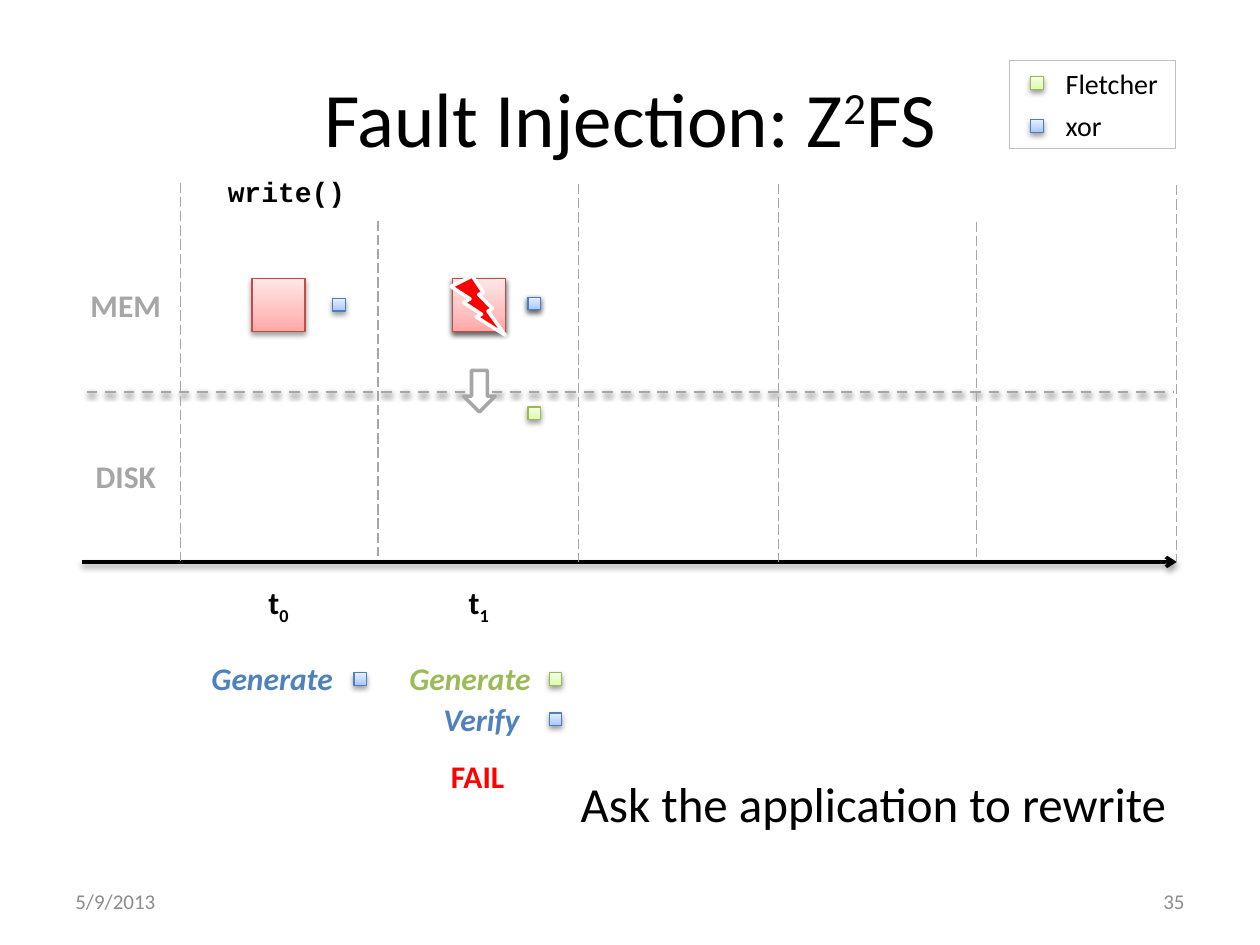
import copy
from dataclasses import dataclass

import pptx
import pptx.dml.color
import pptx.enum.dml
import pptx.enum.shapes
import pptx.enum.text
import pptx.oxml
import pptx.oxml.ns
import pptx.util
from pptx.util import Inches

SHAPE = pptx.enum.shapes.MSO_SHAPE
DASH = pptx.enum.dml.MSO_LINE
ALIGN = pptx.enum.text.PP_ALIGN
ANCHOR = pptx.enum.text.MSO_ANCHOR
qn = pptx.oxml.ns.qn


@dataclass(frozen=True)
class Theme:
    font: str = "Calibri"
    code_font: str = "Courier New"
    black: str = "000000"
    white: str = "FFFFFF"
    gray: str = "A6A6A6"
    border: str = "BFBFBF"
    footer: str = "8C8C8C"
    red: str = "FF0000"
    blue: str = "4F81BD"
    green: str = "9BBB59"
    # Each tint holds the outline, then the gradient from bottom to top.
    xor: tuple = ("4B7EBC", "A4C4FF", "BFD4FF", "E6EEFF")
    fletcher: tuple = ("98B955", "DAFDA7", "E4FCC2", "F5FFE7")
    data: tuple = ("BF4C48", "FFA6A5", "FFC0BF", "FFE7E7")
    stops: tuple = (0, 0.35, 1)
    title_size: int = 44
    message_size: int = 28
    label_size: int = 18
    small_size: int = 16
    footer_size: int = 12


THEME = Theme()
CHECKSUM_SIZE = 0.1
BLOCK_SIZE = 0.42
BLOCK_TOP = 2.21
TIME_LEFTS = (2, 3.59)


def rgb(color):
    return pptx.dml.color.RGBColor.from_string(color)


def add_drop_shadow(effects):
    effects.append(pptx.oxml.parse_xml(
        f'<a:outerShdw {pptx.oxml.ns.nsdecls("a")} blurRad="40000" dist="20000" '
        'dir="5400000" rotWithShape="0"><a:srgbClr val="000000">'
        '<a:alpha val="38000"/></a:srgbClr></a:outerShdw>'))


def add_run(paragraph, text, size, color, font=THEME.font, bold=False,
            italic=False, baseline=0):
    """Add a run; baseline is the raise in percent, negative for a subscript."""
    run = paragraph.add_run()
    run.text = text
    run.font.name = font
    run.font.size = pptx.util.Pt(size)
    run.font.color.rgb = rgb(color)
    run.font.bold = bold
    run.font.italic = italic
    if baseline:
        run._r.get_or_add_rPr().set("baseline", str(baseline * 1000))


def add_text_box(slide, box, align=ALIGN.LEFT, anchor=ANCHOR.TOP, wrap=True):
    """Add an empty text box and return its paragraph."""
    frame = slide.shapes.add_textbox(*map(Inches, box)).text_frame
    frame.word_wrap = wrap
    frame.vertical_anchor = anchor
    frame.paragraphs[0].alignment = align
    return frame.paragraphs[0]


def add_label(slide, box, text, color, size=THEME.label_size, bold=True,
              italic=False, font=THEME.font, **layout):
    paragraph = add_text_box(slide, box, **layout)
    add_run(paragraph, text, size, color, font, bold, italic)


def add_plain_shape(slide, kind, box, fill, line, width):
    shape = slide.shapes.add_shape(kind, *map(Inches, box))
    shape.shadow.inherit = False
    shape.fill.solid()
    shape.fill.fore_color.rgb = rgb(fill)
    shape.line.color.rgb = rgb(line)
    shape.line.width = pptx.util.Pt(width)


def add_square(slide, left, top, size, tint):
    """Add a shadowed square with a three-stop gradient."""
    outline, *colors = tint
    shape = slide.shapes.add_shape(SHAPE.RECTANGLE, *map(Inches, (left, top, size, size)))
    shape.fill.gradient()
    shape.fill.gradient_angle = 90
    stop_list = shape._element.spPr.find(qn("a:gradFill")).find(qn("a:gsLst"))
    stop_list.append(copy.deepcopy(stop_list[-1]))
    for stop, position, color in zip(shape.fill.gradient_stops, THEME.stops, colors):
        stop.position = position
        stop.color.rgb = rgb(color)
    shape.line.color.rgb = rgb(outline)
    shape.line.width = pptx.util.Pt(0.75)
    shape.shadow.inherit = False
    add_drop_shadow(shape._element.spPr.find(qn("a:effectLst")))


def add_block(slide, left):
    add_square(slide, left, BLOCK_TOP, BLOCK_SIZE, THEME.data)


def add_checksum(slide, left, top, tint):
    add_square(slide, left, top, CHECKSUM_SIZE, tint)


def add_line(slide, start, end, color, width, dash=None, shadow=False, arrow=False):
    line = slide.shapes.add_connector(
        pptx.enum.shapes.MSO_CONNECTOR.STRAIGHT, *map(Inches, start + end))
    line.line.color.rgb = rgb(color)
    line.line.width = pptx.util.Pt(width)
    if dash:
        line.line.dash_style = dash
    properties = line._element.spPr
    if arrow:
        outline = properties.find(qn("a:ln"))
        outline.append(outline.makeelement(qn("a:tailEnd"), {"type": "arrow"}))
    effects = properties.makeelement(qn("a:effectLst"), {})
    properties.append(effects)
    if shadow:
        add_drop_shadow(effects)


def add_title(slide):
    title = slide.shapes.title
    title.left, title.top, title.width, title.height = map(Inches, (0.5, 0.3, 9, 1.25))
    title.text_frame.vertical_anchor = ANCHOR.MIDDLE
    paragraph = title.text_frame.paragraphs[0]
    paragraph.alignment = ALIGN.CENTER
    for text, baseline in (("Fault Injection: Z", 0), ("2", 30), ("FS", 0)):
        add_run(paragraph, text, THEME.title_size, THEME.black, baseline=baseline)


def add_timeline(slide):
    add_line(slide, (0.69, 3.11), (9.31, 3.11), THEME.gray, 1.5, DASH.DASH, shadow=True)
    add_label(slide, (0.62, 2.22, 0.77, 0.4), "MEM", THEME.gray, wrap=False)
    add_label(slide, (0.66, 3.58, 0.69, 0.4), "DISK", THEME.gray, wrap=False)
    add_line(slide, (0.65, 4.46), (9.34, 4.46), THEME.black, 2, shadow=True, arrow=True)
    for left, top, bottom in ((1.43, 1.45, 4.45), (3, 1.75, 4.41), (4.59, 1.46, 4.46),
                              (6.18, 1.46, 4.46), (7.75, 1.76, 4.42), (9.34, 1.47, 4.47)):
        add_line(slide, (left, top), (left, bottom), THEME.gray, 0.75, DASH.LONG_DASH)
    for index, left in enumerate(TIME_LEFTS):
        paragraph = add_text_box(slide, (left, 4.58, 0.42, 0.42), ALIGN.CENTER)
        for text, baseline in (("t", 0), (str(index), -25)):
            add_run(paragraph, text, THEME.label_size, THEME.black, bold=True,
                    baseline=baseline)


def add_write_and_fault(slide):
    first, second = TIME_LEFTS
    add_label(slide, (1.71, 1.34, 1.26, 0.37), "write()", THEME.black,
              THEME.small_size, font=THEME.code_font)
    add_block(slide, first)
    add_checksum(slide, 2.64, 2.37, THEME.xor)
    # The faulty copy is stacked on the good one, which deepens its shadow.
    for _ in range(2):
        add_block(slide, second)
        add_checksum(slide, 4.19, 2.36, THEME.xor)
    add_plain_shape(slide, SHAPE.LIGHTNING_BOLT, (3.58, 2.19, 0.43, 0.47),
                    THEME.red, THEME.white, 2)
    add_plain_shape(slide, SHAPE.DOWN_ARROW, (3.68, 2.94, 0.25, 0.33),
                    THEME.white, THEME.gray, 2)
    add_checksum(slide, 4.19, 3.23, THEME.fletcher)


def add_actions(slide):
    for left, top, width, text, color, mark_left, mark_top, tint in (
            (1.58, 5.18, 1.18, "Generate", THEME.blue, 2.81, 5.34, THEME.xor),
            (3.15, 5.18, 1.18, "Generate", THEME.green, 4.36, 5.34, THEME.fletcher),
            (3.42, 5.51, 0.83, "Verify", THEME.blue, 4.36, 5.66, THEME.xor)):
        add_label(slide, (left, top, width, 0.4), text, color, italic=True)
        add_checksum(slide, mark_left, mark_top, tint)
    add_label(slide, (3.48, 5.96, 0.63, 0.42), "FAIL", THEME.red)
    add_label(slide, (4.51, 6.09, 4.99, 0.57), "Ask the application to rewrite",
              THEME.black, THEME.message_size, bold=False)


def add_legend(slide):
    add_plain_shape(slide, SHAPE.RECTANGLE, (8.01, 0.48, 1.32, 0.7),
                    THEME.white, THEME.border, 0.75)
    for text, top, mark_top, tint in (("Fletcher", 0.48, 0.61, THEME.fletcher),
                                      ("xor", 0.81, 0.95, THEME.xor)):
        add_checksum(slide, 8.18, mark_top, tint)
        add_label(slide, (8.36, top, 1.08, 0.37), text, THEME.black,
                  THEME.small_size, bold=False)


def add_footer(slide):
    for left, text, align in ((0.5, "5/9/2013", ALIGN.LEFT), (7.17, "35", ALIGN.RIGHT)):
        add_label(slide, (left, 6.95, 2.33, 0.4), text, THEME.footer, THEME.footer_size,
                  bold=False, align=align, anchor=ANCHOR.MIDDLE)


def main():
    presentation = pptx.Presentation()
    presentation.slide_width, presentation.slide_height = Inches(10), Inches(7.5)
    slide = presentation.slides.add_slide(presentation.slide_layouts[5])
    for add_part in (add_title, add_timeline, add_write_and_fault, add_actions,
                     add_legend, add_footer):
        add_part(slide)
    presentation.save("out.pptx")


if __name__ == "__main__":
    main()
